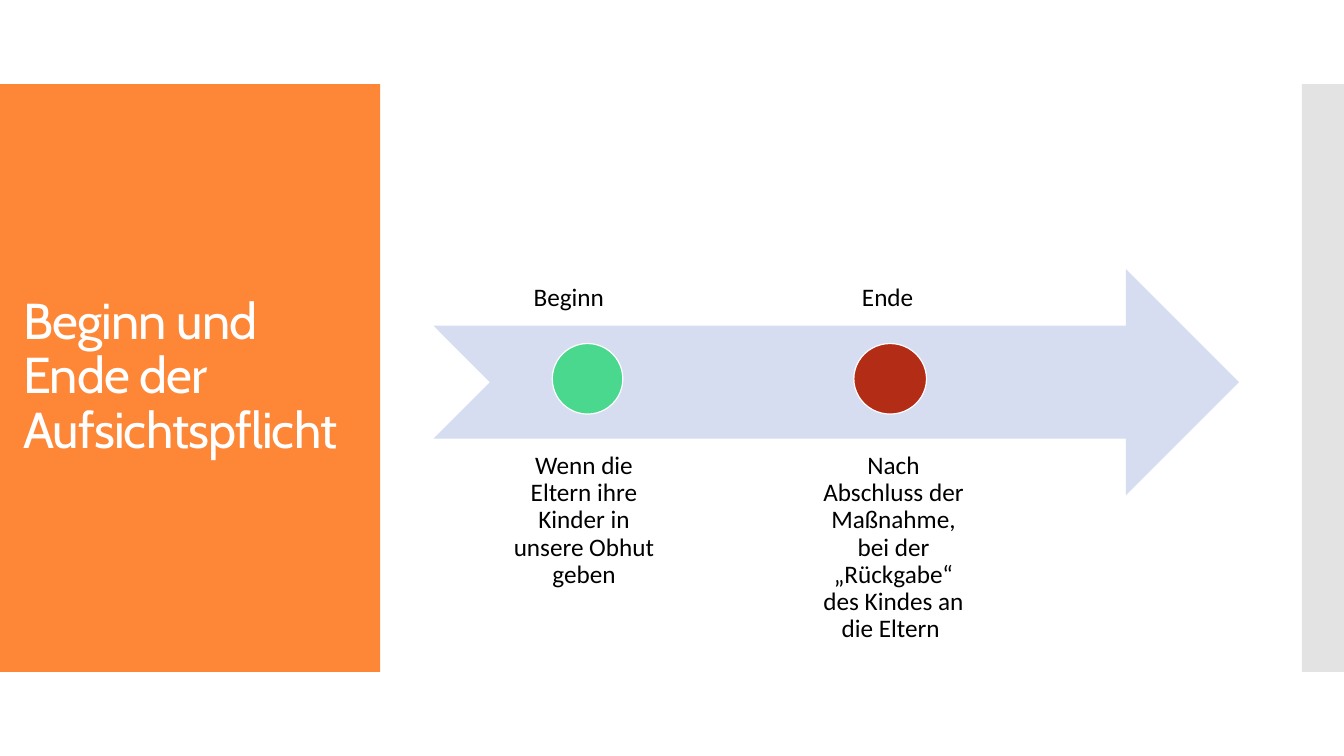
from lxml import etree
from pptx import Presentation
from pptx import util as u
from pptx.dml.color import RGBColor
from pptx.enum import shapes, text
from pptx.oxml.ns import qn

WIDTH, HEIGHT = u.Inches(13.333), u.Inches(7.5)
COLUMN, ROW = WIDTH / 32, HEIGHT / 18
SHAPE = shapes.MSO_SHAPE
ANCHOR = text.MSO_ANCHOR
LABEL_SIZE = (4.15, 5.38)

# caption, its column, description, its column, dot column, dot width, dot colour
MILESTONES = [
    ("Beginn", 11.47, "Wenn die Eltern ihre Kinder in unsere Obhut geben", 11.83,
     13.15, 1.68, "4AD78E"),
    ("Ende", 19.06,
     "Nach Abschluss der Maßnahme, bei der „Rückgabe“ des Kindes an die Eltern ", 19.2,
     20.33, 1.73, "B32C16"),
]


def color(hex_value):
    return RGBColor.from_string(hex_value)


def place(column, row, columns, rows):
    """Turn grid units into left, top, width and height."""
    return (round(column * COLUMN), round(row * ROW),
            round(columns * COLUMN), round(rows * ROW))


def add_block(slide, kind, area, fill, line=None, opacity=None):
    shape = slide.shapes.add_shape(kind, *place(*area))
    shape.shadow.inherit = False
    shape.fill.solid()
    shape.fill.fore_color.rgb = color(fill)
    if opacity is not None:
        tone = shape.element.spPr.find(qn("a:solidFill"))[0]
        etree.SubElement(tone, qn("a:alpha"), val=str(opacity * 1000))
    if line:
        shape.line.color.rgb = color(line)
        shape.line.width = u.Pt(0.85)
    else:
        shape.line.fill.background()
    return shape


def write(shape, content, *, font, size, fill, align, anchor, inset=None, tracking=None):
    frame = shape.text_frame
    frame.word_wrap = True
    frame.auto_size = text.MSO_AUTO_SIZE.NONE
    frame.vertical_anchor = anchor
    if inset is not None:
        frame.margin_left = frame.margin_right = u.Inches(inset)
        frame.margin_top = frame.margin_bottom = u.Inches(inset)
    paragraph = frame.paragraphs[0]
    paragraph.alignment = align
    paragraph.line_spacing = 0.9
    run = paragraph.add_run()
    run.text = content
    run.font.name = font
    run.font.size = u.Pt(size)
    run.font.color.rgb = color(fill)
    if tracking is not None:
        properties = shape.element.find(".//" + qn("a:rPr"))
        properties.set("spc", str(round(tracking * 100)))


def add_label(slide, content, column, row, anchor):
    box = slide.shapes.add_textbox(*place(column, row, *LABEL_SIZE))
    write(box, content, font="Calibri", size=18, fill="000000",
          align=text.PP_ALIGN.CENTER, anchor=anchor, inset=0.14)


def add_milestone(slide, caption, caption_column, description, description_column,
                  dot_column, dot_width, dot_fill):
    add_label(slide, caption, caption_column, 2.38, ANCHOR.BOTTOM)
    add_label(slide, description, description_column, 10.44, ANCHOR.TOP)
    add_block(slide, SHAPE.OVAL, (dot_column, 8.18, dot_width, 1.68), dot_fill, line="FFFFFF")


def set_title(slide, content):
    """Fill the title and bring it in front of the orange panel."""
    title = slide.shapes.title
    title.left, title.top, title.width, title.height = place(0.31, 2.95, 8.52, 12.07)
    write(title, content, font="Cabin", size=36, fill="FFFFFF",
          align=text.PP_ALIGN.LEFT, anchor=ANCHOR.MIDDLE, tracking=-0.6)
    title.element.getparent().append(title.element)


def main():
    presentation = Presentation()
    presentation.slide_width, presentation.slide_height = WIDTH, HEIGHT
    slide = presentation.slides.add_slide(presentation.slide_layouts.get_by_name("Title Only"))
    add_block(slide, SHAPE.RECTANGLE, (0, 2, 9.05, 14), "FE8637")
    add_block(slide, SHAPE.RECTANGLE, (31, 2, 1, 14), "C8C8C8", opacity=50)
    add_block(slide, SHAPE.NOTCHED_RIGHT_ARROW, (10.32, 6.41, 19.18, 5.38), "D6DDF1")
    for milestone in MILESTONES:
        add_milestone(slide, *milestone)
    set_title(slide, "Beginn und Ende der Aufsichtspflicht")
    presentation.save("out.pptx")


if __name__ == "__main__":
    main()
